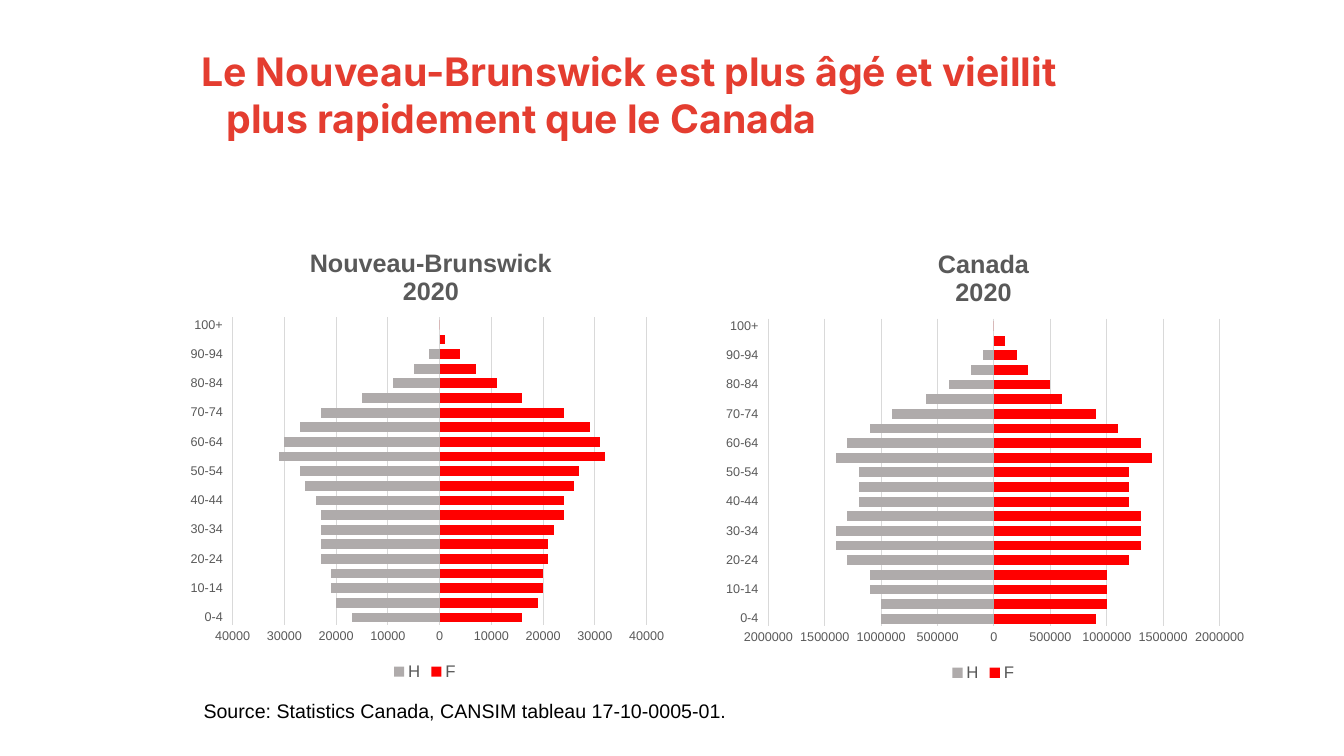
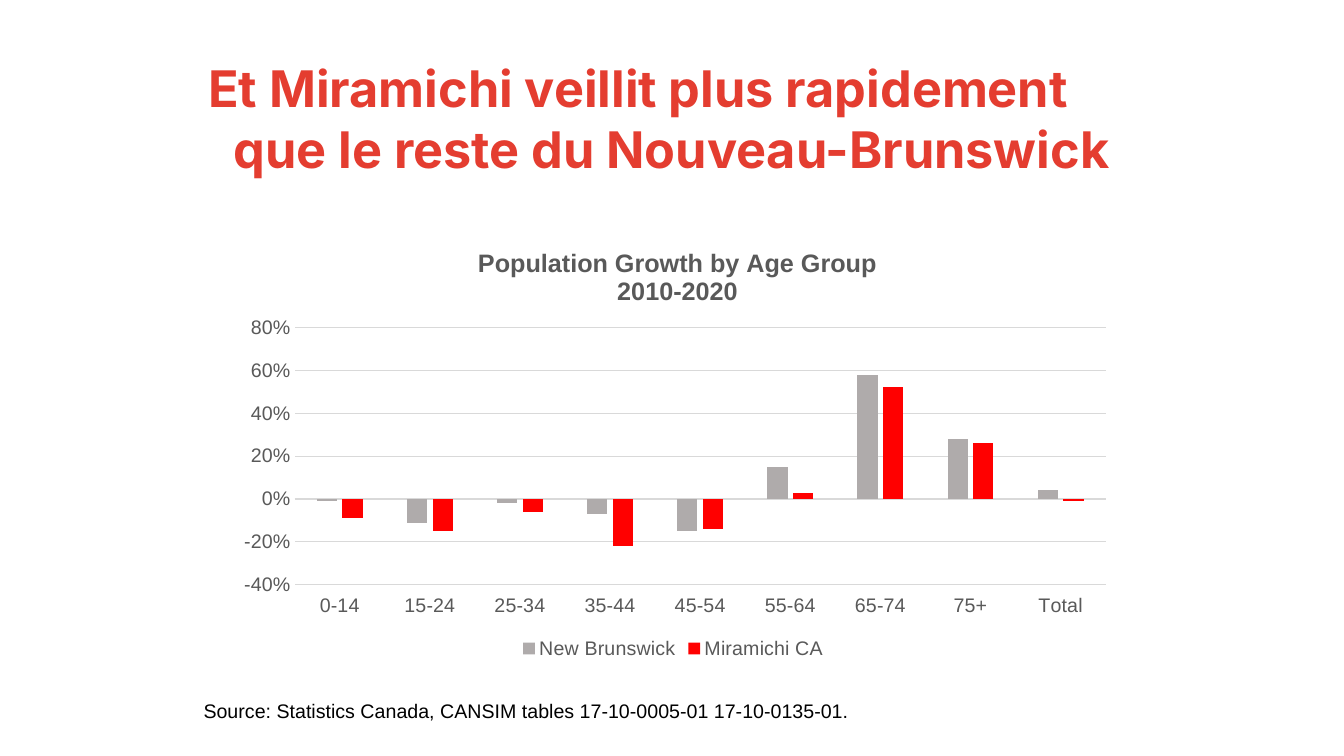
"""Build two slides comparing how the population ages in Canada and New Brunswick."""
from dataclasses import dataclass

from lxml import etree
from pptx import Presentation
from pptx.chart.chart import Chart
from pptx.chart.data import CategoryChartData
from pptx.dml.color import RGBColor
from pptx.enum.chart import XL_CHART_TYPE, XL_LEGEND_POSITION, XL_TICK_LABEL_POSITION, XL_TICK_MARK
from pptx.enum.text import MSO_AUTO_SIZE, PP_ALIGN
from pptx.oxml.ns import qn
from pptx.slide import Slide
from pptx.text.text import Font
from pptx.util import Cm, Pt

STACKED_BARS = XL_CHART_TYPE.BAR_STACKED
CLUSTERED_COLUMNS = XL_CHART_TYPE.COLUMN_CLUSTERED
LEGEND_BOTTOM = XL_LEGEND_POSITION.BOTTOM
LABELS_LOW = XL_TICK_LABEL_POSITION.LOW
NO_TICKS = XL_TICK_MARK.NONE
CENTERED = PP_ALIGN.CENTER
GROW_TO_TEXT = MSO_AUTO_SIZE.SHAPE_TO_FIT_TEXT

BLANK_LAYOUT = 6
TITLE_FONT, BODY_FONT = "Inter", "Arial"
TITLE_RED, BLACK = "E43D30", "000000"
CHART_TEXT, GRID = "595959", "D9D9D9"
SERIES_COLORS = ("AFABAB", "FF0000")
AGE_BANDS = [f"{age}-{age + 4}" for age in range(0, 100, 5)] + ["100+"]


@dataclass(frozen=True)
class Area:
    """Position and size in centimetres, or as fractions of a chart."""

    left: float
    top: float
    width: float
    height: float


@dataclass(frozen=True)
class ChartStyle:
    """Look shared by charts of one type."""

    kind: XL_CHART_TYPE
    number_format: str
    axis_size: int
    legend_size: int
    gap: int
    overlap: int


@dataclass(frozen=True)
class ChartSpec:
    """One chart with its data, scale and layout."""

    title: str
    style: ChartStyle
    area: Area
    plot: Area
    title_left: float
    categories: list[str]
    series: dict[str, list[float]]
    minimum: float
    maximum: float
    step: float


@dataclass(frozen=True)
class PageSpec:
    """One slide with its heading, charts and source line."""

    heading: str
    heading_area: Area
    heading_size: int
    source: str
    charts: list[ChartSpec]


PYRAMID = ChartStyle(STACKED_BARS, "0;0", 9, 12, 50, 100)
GROWTH = ChartStyle(CLUSTERED_COLUMNS, "0%", 14, 14, 219, -27)
SOURCE_AREA = Area(4.88, 17.48, 23.77, 0.86)
TITLE_TOP = 0.04

NEW_BRUNSWICK = ChartSpec(
    "Nouveau-Brunswick\n2020", PYRAMID,
    Area(4.5, 5.69, 12.42, 11.56), Area(0.11, 0.2, 0.84, 0.67), 0.26, AGE_BANDS,
    {
        "H": [-17000, -20000, -21000, -21000, -23000, -23000, -23000, -23000, -24000, -26000, -27000,
              -31000, -30000, -27000, -23000, -15000, -9000, -5000, -2000, 0, 0],
        "F": [16000, 19000, 20000, 20000, 21000, 21000, 22000, 24000, 24000, 26000, 27000,
              32000, 31000, 29000, 24000, 16000, 11000, 7000, 4000, 1000, 0],
    },
    -40000, 40000, 10000,
)
CANADA = ChartSpec(
    "Canada\n2020", PYRAMID,
    Area(18.01, 5.72, 13.54, 11.56), Area(0.1, 0.2, 0.84, 0.67), 0.41, AGE_BANDS,
    {
        "H": [-1000000, -1000000, -1100000, -1100000, -1300000, -1400000, -1400000, -1300000, -1200000,
              -1200000, -1200000, -1400000, -1300000, -1100000, -900000, -600000, -400000, -200000,
              -100000, 0, 0],
        "F": [900000, 1000000, 1000000, 1000000, 1200000, 1300000, 1300000, 1300000, 1200000,
              1200000, 1200000, 1400000, 1300000, 1100000, 900000, 600000, 500000, 300000,
              200000, 100000, 0],
    },
    -2000000, 2000000, 500000,
)
MIRAMICHI = ChartSpec(
    "Population Growth by Age Group\n2010-2020", GROWTH,
    Area(5.61, 5.72, 22.71, 11), Area(0.08, 0.23, 0.9, 0.59), 0.28,
    ["0-14", "15-24", "25-34", "35-44", "45-54", "55-64", "65-74", "75+", "Total"],
    {
        "New Brunswick": [-0.01, -0.11, -0.02, -0.07, -0.15, 0.15, 0.58, 0.28, 0.04],
        "Miramichi CA": [-0.09, -0.15, -0.06, -0.22, -0.14, 0.03, 0.52, 0.26, -0.01],
    },
    -0.4, 0.8, 0.2,
)
PAGES = [
    PageSpec(
        "Le Nouveau-Brunswick est plus âgé et vieillit plus rapidement que le Canada",
        Area(4.19, 1.07, 24.66, 3.3), 28,
        "Source: Statistics Canada, CANSIM tableau 17-10-0005-01.",
        [NEW_BRUNSWICK, CANADA],
    ),
    PageSpec(
        "Et Miramichi veillit plus rapidement que le reste du Nouveau-Brunswick",
        Area(4.37, 1.32, 24.66, 3.94), 36,
        "Source: Statistics Canada, CANSIM tables 17-10-0005-01 17-10-0135-01.",
        [MIRAMICHI],
    ),
]


def rgb(color: str) -> RGBColor:
    """Turn a hex string into a colour."""
    return RGBColor.from_string(color)


def lengths(area: Area) -> tuple[Cm, Cm, Cm, Cm]:
    """Give an area as slide lengths."""
    return Cm(area.left), Cm(area.top), Cm(area.width), Cm(area.height)


def set_font(font: Font, name: str, size: int, color: str, bold: bool = False) -> None:
    """Apply typeface, size, colour and weight."""
    font.name, font.size, font.bold = name, Pt(size), bold
    font.color.rgb = rgb(color)


def add_heading(page: Slide, spec: PageSpec) -> None:
    """Add the red heading with its hanging indent."""
    box = page.shapes.add_textbox(*lengths(spec.heading_area))
    box.text_frame.word_wrap = True
    para = box.text_frame.paragraphs[0]
    para.text = spec.heading
    properties = para._p.get_or_add_pPr()
    properties.set("marL", str(Cm(1.27)))
    properties.set("indent", str(-Cm(0.64)))
    set_font(para.runs[0].font, TITLE_FONT, spec.heading_size, TITLE_RED, True)


def add_source(page: Slide, text: str) -> None:
    """Add the source line at the foot of the slide."""
    box = page.shapes.add_textbox(*lengths(SOURCE_AREA))
    box.text_frame.word_wrap = True
    box.text_frame.auto_size = GROW_TO_TEXT
    box.text_frame.text = text
    set_font(box.text_frame.paragraphs[0].runs[0].font, BODY_FONT, 14, BLACK)


def place(parent: etree._Element, index: int, values: dict[str, str | float]) -> None:
    """Write a manual layout into a chart part."""
    layout = parent.find(qn("c:layout"))
    if layout is None:
        layout = etree.Element(qn("c:layout"))
        parent.insert(index, layout)
    manual = etree.SubElement(layout, qn("c:manualLayout"))
    for name, value in values.items():
        etree.SubElement(manual, qn(f"c:{name}")).set("val", str(value))


def style_title(chart: Chart, spec: ChartSpec) -> None:
    """Write and place the two-line chart title."""
    chart.has_title = True
    title = chart.chart_title
    title.text_frame.text = spec.title
    for para in title.text_frame.paragraphs:
        para.alignment = CENTERED
        for span in para.runs:
            set_font(span.font, BODY_FONT, 18, CHART_TEXT, True)
    title.include_in_layout = False
    place(title.element, 1, {"xMode": "edge", "yMode": "edge", "x": spec.title_left, "y": TITLE_TOP})


def style_axes(chart: Chart, spec: ChartSpec) -> None:
    """Format both axes and set the value scale."""
    for axis in (chart.category_axis, chart.value_axis):
        axis.major_tick_mark = axis.minor_tick_mark = NO_TICKS
        set_font(axis.tick_labels.font, BODY_FONT, spec.style.axis_size, CHART_TEXT)
    categories, values = chart.category_axis, chart.value_axis
    categories.has_major_gridlines = False
    categories.tick_label_position = LABELS_LOW
    values.format.line.fill.background()
    values.has_major_gridlines = True
    for line in (categories.format.line, values.major_gridlines.format.line):
        line.color.rgb = rgb(GRID)
        line.width = Pt(0.75)
    values.minimum_scale, values.maximum_scale = spec.minimum, spec.maximum
    values.major_unit = spec.step
    values.tick_labels.number_format = spec.style.number_format
    values.tick_labels.number_format_is_linked = False


def add_chart(page: Slide, spec: ChartSpec) -> None:
    """Add one chart with its data and formatting."""
    data = CategoryChartData()
    data.categories = spec.categories
    for name, values in spec.series.items():
        data.add_series(name, values)
    chart = page.shapes.add_chart(spec.style.kind, *lengths(spec.area), data).chart
    set_font(chart.font, BODY_FONT, 10, BLACK)
    style_title(chart, spec)
    style_axes(chart, spec)
    plot = chart.plots[0]
    plot.vary_by_categories = False
    plot.gap_width, plot.overlap = spec.style.gap, spec.style.overlap
    for series, color in zip(plot.series, SERIES_COLORS):
        series.invert_if_negative = False
        series.format.fill.solid()
        series.format.fill.fore_color.rgb = rgb(color)
    chart.has_legend = True
    chart.legend.position = LEGEND_BOTTOM
    chart.legend.include_in_layout = False
    set_font(chart.legend.font, BODY_FONT, spec.style.legend_size, CHART_TEXT)
    place(chart.element.find(".//" + qn("c:plotArea")), 0, {
        "layoutTarget": "inner", "xMode": "edge", "yMode": "edge",
        "x": spec.plot.left, "y": spec.plot.top, "w": spec.plot.width, "h": spec.plot.height,
    })


def main() -> None:
    """Build and save the deck."""
    deck = Presentation()
    deck.slide_width, deck.slide_height = Cm(33.87), Cm(19.05)
    for spec in PAGES:
        page = deck.slides.add_slide(deck.slide_layouts[BLANK_LAYOUT])
        add_heading(page, spec)
        for chart in spec.charts:
            add_chart(page, chart)
        add_source(page, spec.source)
    deck.save("out.pptx")


if __name__ == "__main__":
    main()
